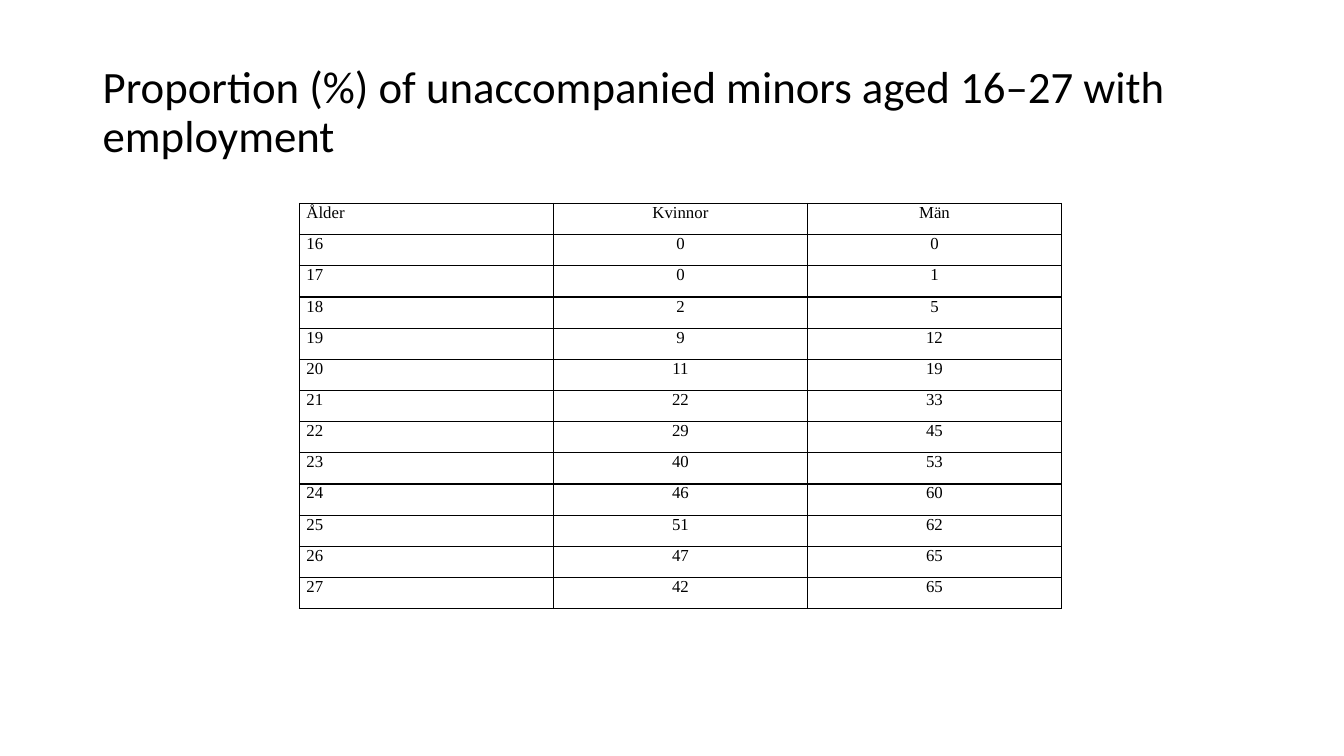
from dataclasses import dataclass

from lxml.etree import SubElement
from pptx import Presentation
from pptx.dml.color import RGBColor
from pptx.enum.text import MSO_ANCHOR as Anchor, PP_ALIGN as Align
from pptx.oxml.ns import qn
from pptx.util import Inches, Pt


@dataclass(frozen=True)
class Theme:
    ink: str = "000000"
    title_font: str = "Calibri"
    table_font: str = "Times New Roman"
    title_size: int = 32
    table_size: int = 12
    border_width: int = 1


THEME = Theme()
WIDTH, HEIGHT = Inches(13.33), Inches(7.5)

TITLE = "Proportion (%) of unaccompanied minors aged 16–27 with employment"
HEADINGS = ("Ålder", "Kvinnor", "Män")
FIRST_AGE = 16
WOMEN = (0, 0, 2, 9, 11, 22, 29, 40, 46, 51, 47, 42)
MEN = (0, 1, 5, 12, 19, 33, 45, 53, 60, 62, 65, 65)


def area(left, top, width, height):
    return (
        int(WIDTH * left / 100),
        int(HEIGHT * top / 100),
        int(WIDTH * width / 100),
        int(HEIGHT * height / 100),
    )


def style_font(para, name, size):
    para.font.name = name
    para.font.size = Pt(size)
    para.font.color.rgb = RGBColor.from_string(THEME.ink)


def add_title(page, text, place):
    frame = page.shapes.add_textbox(*place).text_frame
    frame.word_wrap = True
    frame.vertical_anchor = Anchor.MIDDLE
    para = frame.paragraphs[0]
    para.text = text
    para.line_spacing = 0.9
    style_font(para, THEME.title_font, THEME.title_size)


def add_borders(cell):
    properties = cell._tc.get_or_add_tcPr()
    for side in ("a:lnL", "a:lnR", "a:lnT", "a:lnB"):
        line = SubElement(properties, qn(side), w=str(Pt(THEME.border_width)))
        fill = SubElement(line, qn("a:solidFill"))
        SubElement(fill, qn("a:srgbClr"), val=THEME.ink)


def fill_cell(cell, value, align):
    cell.margin_left = cell.margin_right = Inches(0.07)
    cell.margin_top = cell.margin_bottom = 0
    add_borders(cell)
    cell.fill.background()
    para = cell.text_frame.paragraphs[0]
    para.text = str(value)
    para.alignment = align
    para.space_before = Pt(3)
    style_font(para, THEME.table_font, THEME.table_size)


def add_data_table(page, records, place):
    table = page.shapes.add_table(len(records), len(records[0]), *place).table
    table.first_row = False
    table.horz_banding = False
    for row, record in enumerate(records):
        for column, value in enumerate(record):
            align = Align.CENTER if column else Align.LEFT
            fill_cell(table.cell(row, column), value, align)


def main():
    deck = Presentation()
    deck.slide_width, deck.slide_height = WIDTH, HEIGHT
    page = deck.slides.add_slide(deck.slide_layouts[6])
    ages = range(FIRST_AGE, FIRST_AGE + len(WOMEN))
    add_title(page, TITLE, area(6.9, 5.33, 86.27, 19.33))
    records = [HEADINGS, *zip(ages, WOMEN, MEN)]
    add_data_table(page, records, area(22.28, 26.93, 56.7, 53.6))
    deck.save("out.pptx")


if __name__ == "__main__":
    main()
